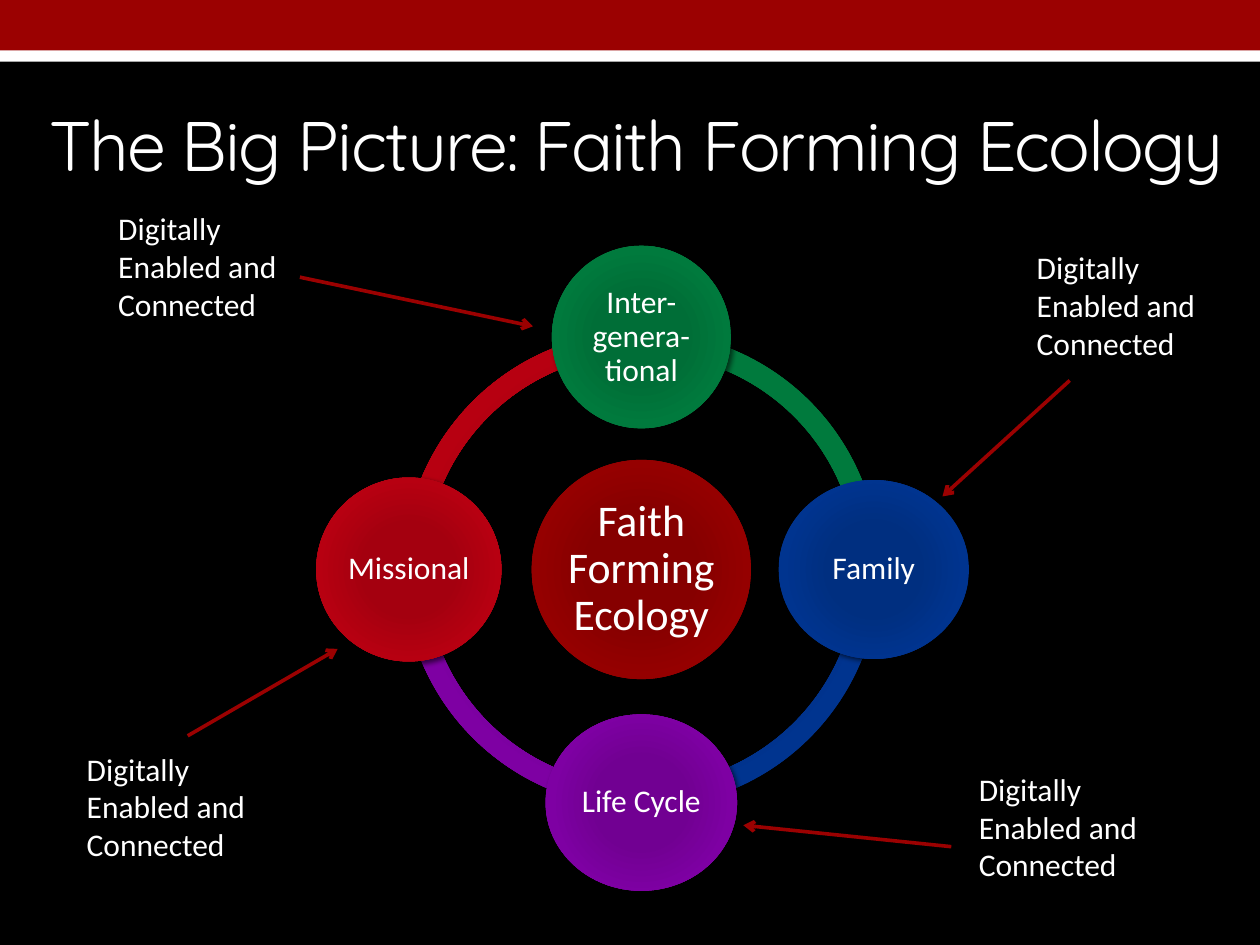
"""Build the faith forming ecology slide."""
from pptx import Presentation
from pptx.dml.color import RGBColor
from pptx.enum.shapes import MSO_CONNECTOR as Conn, MSO_SHAPE as Geo
from pptx.enum.text import MSO_ANCHOR as Anchor, MSO_AUTO_SIZE as Fit, PP_ALIGN as Align
from pptx.oxml import parse_xml
from pptx.oxml.ns import nsdecls, qn
from pptx.util import Inches, Pt

BLACK = RGBColor(0x00, 0x00, 0x00)
WHITE = RGBColor(0xFF, 0xFF, 0xFF)
RED = RGBColor(0x9B, 0x01, 0x01)
MAROON = (RGBColor(0x86, 0x00, 0x00), RGBColor(0x95, 0x00, 0x00), RED)
GREEN = (RGBColor(0x00, 0x6E, 0x37), RGBColor(0x00, 0x7A, 0x3D), RGBColor(0x00, 0x80, 0x40))
BLUE = (RGBColor(0x00, 0x2F, 0x80), RGBColor(0x00, 0x34, 0x8F), RGBColor(0x03, 0x37, 0x92))
PURPLE = (RGBColor(0x71, 0x00, 0x92), RGBColor(0x7E, 0x00, 0xA3), RGBColor(0x80, 0x07, 0xA4))
CRIMSON = (RGBColor(0xA4, 0x00, 0x0F), RGBColor(0xB7, 0x00, 0x11), RGBColor(0xB5, 0x0B, 0x1B))


def write(frame, words, size=18, font="Calibri", color=WHITE, align=Align.LEFT,
          anchor=Anchor.TOP, inset=None, lead=None, track=None, fit=Fit.NONE):
    """Put formatted words into a text frame."""
    frame.word_wrap = True
    frame.auto_size = fit
    frame.vertical_anchor = anchor
    if inset is not None:
        frame.margin_left = frame.margin_right = Inches(inset)
        frame.margin_top = frame.margin_bottom = Inches(inset)
    para = frame.paragraphs[0]
    para.alignment = align
    if lead:
        para.line_spacing = lead
    run = para.add_run()
    run.text = words
    run.font.size = Pt(size)
    run.font.name = font
    run.font.color.rgb = color
    if track:
        run.font._element.set("spc", str(track * 100))


class Deck:
    """Hold the style and the current slide."""

    def __init__(self):
        """Start a black slide with a title placeholder."""
        self.file = Presentation()
        self.file.slide_width, self.file.slide_height = Inches(10), Inches(7.5)
        self.slide = self.file.slides.add_slide(self.file.slide_layouts[5])
        self.shapes = self.slide.shapes
        back = self.slide.background.fill
        back.solid()
        back.fore_color.rgb = BLACK

    def title(self, words, box):
        """Place and fill the title."""
        head = self.shapes.title
        head.left, head.top, head.width, head.height = map(Inches, box)
        write(head.text_frame, words, size=40, font="Quicksand", track=-1,
              align=Align.CENTER, anchor=Anchor.MIDDLE)

    def shape(self, kind, box):
        """Add a shape with no line or shadow."""
        item = self.shapes.add_shape(kind, *map(Inches, box))
        item.line.fill.background()
        item.shadow.inherit = False
        return item

    def bar(self, box, color):
        """Add a plain band."""
        item = self.shape(Geo.RECTANGLE, box)
        item.fill.solid()
        item.fill.fore_color.rgb = color

    def shade(self, item, tones):
        """Give a shape a round gradient and a soft shadow."""
        item.fill.background()
        props = item._element.spPr
        dark, mid, edge = tones
        stops = "".join(f'<a:gs pos="{pos}000"><a:srgbClr val="{tone}"/></a:gs>'
                        for pos, tone in ((0, dark), (34, dark), (70, mid), (100, edge)))
        grad = parse_xml(
            f'<a:gradFill {nsdecls("a")} rotWithShape="1"><a:gsLst>{stops}</a:gsLst>'
            '<a:path path="circle"><a:fillToRect l="100000" t="100000" r="100000" b="100000"/>'
            '</a:path></a:gradFill>')
        props.replace(props.find(qn("a:noFill")), grad)
        glow = parse_xml(
            f'<a:outerShdw {nsdecls("a")} blurRad="{Pt(3)}" dist="{Pt(2)}" dir="2700000" '
            f'rotWithShape="0"><a:srgbClr val="{BLACK}"><a:alpha val="60000"/></a:srgbClr>'
            '</a:outerShdw>')
        props.find(qn("a:effectLst")).append(glow)

    def arc(self, box, start, end, tones):
        """Add a ring section between two angles in degrees."""
        item = self.shape(Geo.BLOCK_ARC, box)
        for spot, value in enumerate((start * 0.6, end * 0.6, 0.046)):
            item.adjustments[spot] = value
        self.shade(item, tones)

    def node(self, words, box, tones, size=18):
        """Add a labelled circle."""
        item = self.shape(Geo.OVAL, box)
        self.shade(item, tones)
        write(item.text_frame, words, size=size, align=Align.CENTER,
              anchor=Anchor.MIDDLE, inset=0.03, lead=0.9)

    def arrow(self, start, end):
        """Add an arrow."""
        item = self.shapes.add_connector(Conn.STRAIGHT, *map(Inches, start + end))
        item.line.color.rgb = RED
        item.line.width = Pt(2.08)
        item.line._get_or_add_ln().append(parse_xml(f'<a:tailEnd {nsdecls("a")} type="arrow"/>'))
        item._element.spPr.append(parse_xml(f'<a:effectLst {nsdecls("a")}/>'))

    def note(self, words, left, top):
        """Add a side note."""
        item = self.shapes.add_textbox(*map(Inches, (left, top, 1.54, 1.31)))
        write(item.text_frame, words, fit=Fit.SHAPE_TO_FIT_TEXT)


def main():
    """Draw the slide and save it."""
    deck = Deck()
    deck.bar((0, 0.24, 10, 0.25), WHITE)
    deck.bar((0, 0, 10, 0.4), RED)
    deck.title("The Big Picture: Faith Forming Ecology", (0.1, 0.53, 9.9, 1.22))

    ring = (3.2, 2.63, 3.78, 3.78)
    for start, tones in ((180, CRIMSON), (90, PURPLE), (0, BLUE), (270, GREEN)):
        deck.arc(ring, start, (start + 90) % 360, tones)

    deck.node("Faith Forming Ecology", (4.22, 3.65, 1.74, 1.74), MAROON, size=25)
    for words, box, tones in (
        ("Inter-genera-tional", (4.38, 1.95, 1.42, 1.45), GREEN),
        ("Family", (6.18, 3.81, 1.51, 1.42), BLUE),
        ("Life Cycle", (4.33, 5.67, 1.52, 1.4), PURPLE),
        ("Missional", (2.51, 3.79, 1.47, 1.46), CRIMSON),
    ):
        deck.node(words, box, tones)

    for start, end in (
        ((8.49, 3.02), (7.48, 3.94)),
        ((2.38, 2.2), (4.23, 2.59)),
        ((1.49, 5.84), (2.68, 5.15)),
        ((7.55, 6.72), (5.9, 6.55)),
    ):
        deck.arrow(start, end)

    for left, top in ((8.13, 1.92), (7.67, 6.06), (0.84, 1.61), (0.59, 5.9)):
        deck.note("Digitally Enabled and Connected", left, top)

    deck.file.save("out.pptx")


if __name__ == "__main__":
    main()
